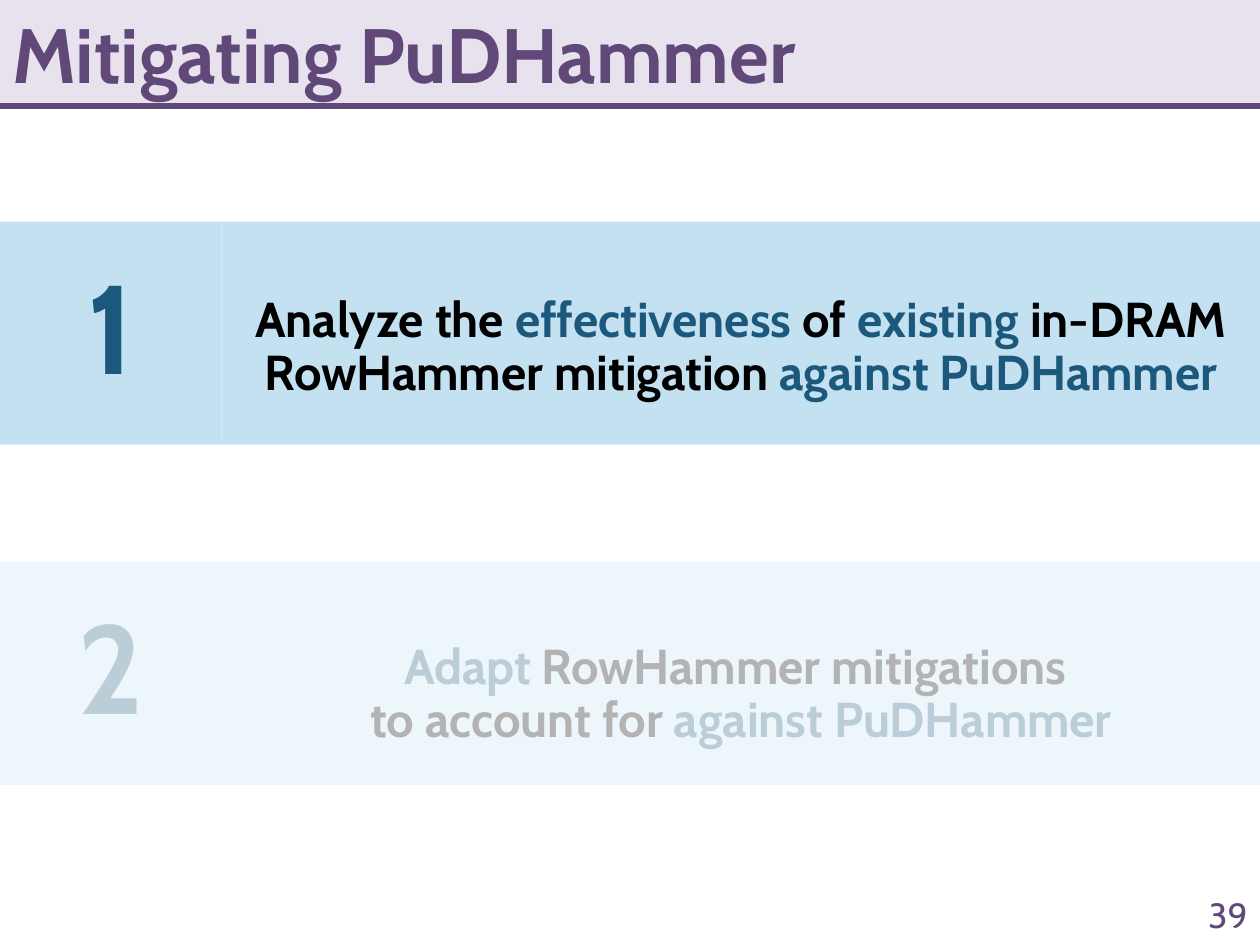
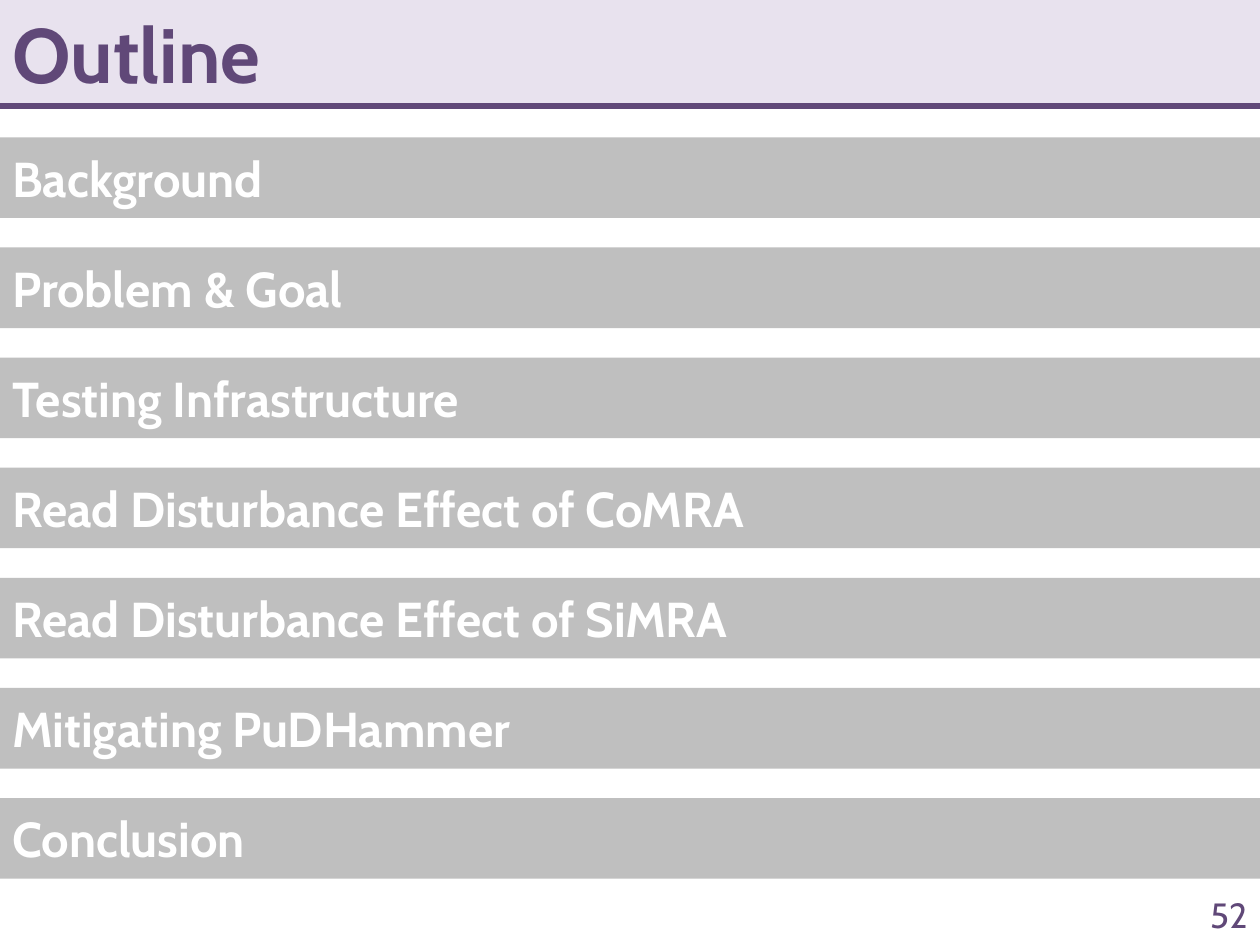
from dataclasses import dataclass

from lxml import etree
from pptx import Presentation
from pptx.dml.color import RGBColor
from pptx.enum.shapes import MSO_CONNECTOR, MSO_SHAPE
from pptx.enum.text import MSO_ANCHOR, MSO_AUTO_SIZE, PP_ALIGN
from pptx.oxml.ns import qn
from pptx.util import Inches, Pt

RECTANGLE, STRAIGHT = MSO_SHAPE.RECTANGLE, MSO_CONNECTOR.STRAIGHT
TOP, MIDDLE = MSO_ANCHOR.TOP, MSO_ANCHOR.MIDDLE
LEFT, CENTER, RIGHT = PP_ALIGN.LEFT, PP_ALIGN.CENTER, PP_ALIGN.RIGHT


@dataclass(frozen=True)
class Theme:
    font: str = "Cabin"
    purple: str = "604878"
    lilac: str = "E8E2EE"
    sky: str = "C4E1F2"
    blue: str = "1B587C"
    grey: str = "BFBFBF"
    black: str = "000000"
    white: str = "FFFFFF"
    title_size: int = 44
    body_size: int = 28
    numeral_size: int = 72
    page_number_size: int = 20


THEME = Theme()
WIDTH, HEIGHT = 10, 7.5
HEADER_HEIGHT = 0.84


def add_panel(page, left, top, width, height, fill):
    panel = page.shapes.add_shape(
        RECTANGLE, Inches(left), Inches(top), Inches(width), Inches(height))
    panel.shadow.inherit = False
    panel.fill.solid()
    panel.fill.fore_color.rgb = RGBColor.from_string(fill)
    panel.line.fill.background()
    return panel


def write(box, spans, color=THEME.black, size=THEME.body_size, bold=True,
          align=LEFT, anchor=MIDDLE, line_spacing=None, space_after=0,
          margin_top=0.05):
    """Fill the box with one paragraph; spans is a text or (text, colour) pairs."""
    frame = box.text_frame
    frame.word_wrap = True
    frame.auto_size = MSO_AUTO_SIZE.NONE
    frame.vertical_anchor = anchor
    frame.margin_top = Inches(margin_top)
    para = frame.paragraphs[0]
    para.alignment = align
    para.line_spacing = line_spacing
    para.space_before, para.space_after = Pt(0), Pt(space_after)
    for text, span_color in [(spans, color)] if isinstance(spans, str) else spans:
        for index, line in enumerate(text.split("\n")):
            if index:
                para.add_line_break()
            span = para.add_run()
            span.text = line
            span.font.name, span.font.size, span.font.bold = THEME.font, Pt(size), bold
            span.font.color.rgb = RGBColor.from_string(span_color)


deck = Presentation()
deck.slide_width, deck.slide_height = Inches(WIDTH), Inches(HEIGHT)
title_only = deck.slide_layouts[5]

# Header band, rule, title and page number of every slide
pages = []
for title_text, number in [("Mitigating PuDHammer", "39"), ("Outline", "52")]:
    page = deck.slides.add_slide(title_only)
    pages.append(page)
    band = add_panel(page, 0, 0, WIDTH, HEADER_HEIGHT, THEME.lilac)
    title = page.shapes.title
    title.left, title.top = 0, 0
    title.width, title.height = Inches(WIDTH), Inches(HEADER_HEIGHT)
    band._element.addnext(title._element)
    write(title, title_text, color=THEME.purple, size=THEME.title_size, space_after=6)

    rule = page.shapes.add_connector(
        STRAIGHT, 0, Inches(HEADER_HEIGHT), Inches(WIDTH), Inches(HEADER_HEIGHT))
    rule.line.color.rgb = RGBColor.from_string(THEME.purple)
    rule.line.width = Pt(3.5)
    etree.SubElement(rule._element.spPr, qn("a:effectLst"))

    page_number = page.shapes.add_textbox(
        Inches(8.92), Inches(7.06), Inches(1.08), Inches(0.4))
    write(page_number, number, color=THEME.purple, size=THEME.page_number_size,
          bold=False, align=RIGHT)

mitigating, outline = pages

# Two numbered steps
STEP_TOP, STEP_PITCH, STEP_HEIGHT = 1.76, 2.7, 1.77
NUMERAL_WIDTH = 1.76
steps = [
    (0.58, [("Analyze the ", THEME.black), ("effectiveness", THEME.blue),
            (" of ", THEME.black), ("existing", THEME.blue),
            (" in-DRAM RowHammer mitigation ", THEME.black),
            ("against PuDHammer", THEME.blue)]),
    (0.64, [("Adapt ", THEME.blue),
            ("RowHammer mitigations \nto account for ", THEME.black),
            ("against PuDHammer", THEME.blue)]),
]
for index, (text_offset, spans) in enumerate(steps):
    top = STEP_TOP + index * STEP_PITCH
    statement = add_panel(mitigating, NUMERAL_WIDTH, top, WIDTH - NUMERAL_WIDTH,
                          STEP_HEIGHT, THEME.sky)
    write(statement, spans, align=CENTER, anchor=TOP, line_spacing=0.9,
          margin_top=text_offset)
    numeral = add_panel(mitigating, 0, top, NUMERAL_WIDTH, STEP_HEIGHT, THEME.sky)
    write(numeral, str(index + 1), color=THEME.blue, size=THEME.numeral_size,
          align=CENTER, line_spacing=0.9)

# Translucent veil that dims the second step
veil = add_panel(mitigating, 0, 4.02, WIDTH, 2.98, THEME.white)
veil_color = veil._element.spPr.find(qn("a:solidFill")).find(qn("a:srgbClr"))
etree.SubElement(veil_color, qn("a:alpha"), val="70000")

# Outline bars at an equal pitch
BAR_TOP, BAR_PITCH, BAR_HEIGHT = 1.09, 0.874, 0.64
topics = ["Background", "Problem & Goal", "Testing Infrastructure",
          "Read Disturbance Effect of CoMRA", "Read Disturbance Effect of SiMRA",
          "Mitigating PuDHammer", "Conclusion"]
for index, topic in enumerate(topics):
    bar = add_panel(outline, 0, BAR_TOP + index * BAR_PITCH, WIDTH, BAR_HEIGHT,
                    THEME.grey)
    write(bar, topic, color=THEME.white)

deck.save("out.pptx")
